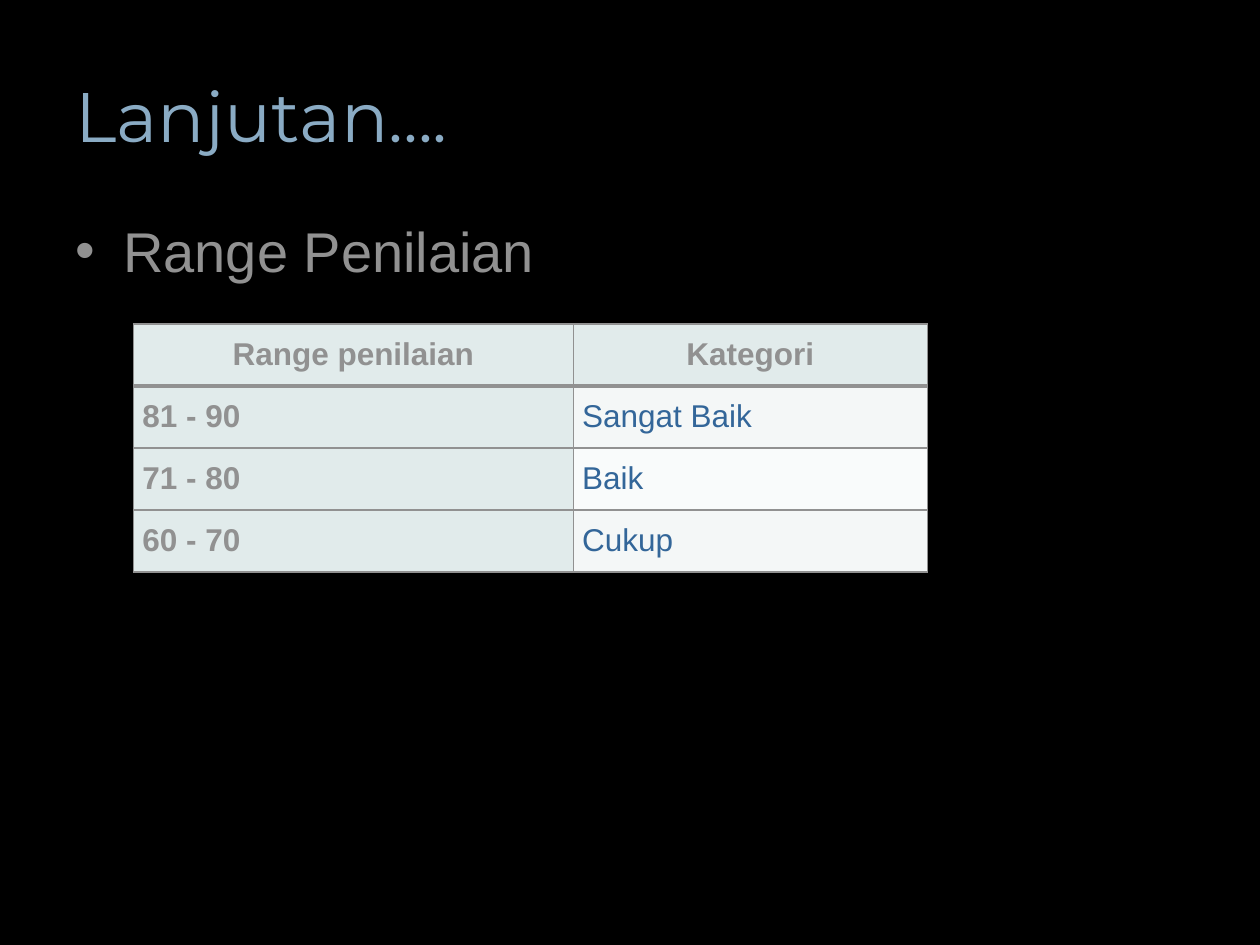
from lxml import etree
from pptx import Presentation
from pptx import util as u
from pptx.dml.color import RGBColor
from pptx.enum import text
from pptx.oxml.ns import qn

W, H = 10, 7.5
GRAY, TITLE_BLUE, TEXT_BLUE = "919191", "8AABC4", "336699"
HEAD_FILL, BAND_FILLS = "E1EBEB", ("F4F7F7", "F9FBFB")
ROWS = [
    ("Range penilaian", "Kategori"),
    ("81 - 90", "Sangat Baik"),
    ("71 - 80", "Baik"),
    ("60 - 70", "Cukup"),
]
COL_SHARES = (0.554, 0.446)


def rgb(value):
    return RGBColor.from_string(value)


def style(p, size, color, font="Arial", bold=False):
    for r in p.runs:
        r.font.size, r.font.name, r.font.bold = u.Pt(size), font, bold
        r.font.color.rgb = rgb(color)


def add_text(s, box, words, anchor):
    tf = s.shapes.add_textbox(*map(u.Inches, box)).text_frame
    tf.word_wrap = True
    tf.vertical_anchor = anchor
    tf.text = words
    return tf.paragraphs[0]


def add_title(s, box):
    p = add_text(s, box, "Lanjutan....", text.MSO_ANCHOR.MIDDLE)
    style(p, 40, TITLE_BLUE, "Montserrat")


def add_bullet(s, box):
    p = add_text(s, box, "Range Penilaian", text.MSO_ANCHOR.TOP)
    pPr = p._p.get_or_add_pPr()
    pPr.set("marL", str(u.Inches(0.38)))
    pPr.set("indent", str(-u.Inches(0.38)))
    etree.SubElement(pPr, qn("a:buFont"), typeface="Arial")
    etree.SubElement(pPr, qn("a:buChar"), char="•")
    style(p, 32, GRAY)


def set_borders(cell, bottom, top):
    tcPr = cell._tc.get_or_add_tcPr()
    widths = {"lnL": 1, "lnR": 1, "lnT": top, "lnB": bottom}
    for i, (tag, width) in enumerate(widths.items()):
        ln = etree.Element(qn("a:" + tag), w=str(u.Pt(width)))
        fill = etree.SubElement(ln, qn("a:solidFill"))
        etree.SubElement(fill, qn("a:srgbClr"), val=GRAY)
        tcPr.insert(i, ln)


def add_score_table(s, box):
    table = s.shapes.add_table(len(ROWS), len(COL_SHARES), *map(u.Inches, box)).table
    for col, share in zip(table.columns, COL_SHARES):
        col.width = u.Inches(box[2] * share)
    for i, row in enumerate(ROWS):
        for j, words in enumerate(row):
            cell = table.cell(i, j)
            head = i == 0 or j == 0
            cell.fill.solid()
            cell.fill.fore_color.rgb = rgb(HEAD_FILL if head else BAND_FILLS[(i - 1) % 2])
            # A thick rule separates the header from the rows
            set_borders(cell, bottom=3 if i == 0 else 1, top=3 if i == 1 else 1)
            cell.margin_left = cell.margin_right = u.Inches(0.07)
            cell.margin_top = cell.margin_bottom = 0
            cell.vertical_anchor = text.MSO_ANCHOR.MIDDLE
            cell.text = words
            p = cell.text_frame.paragraphs[0]
            p.alignment = text.PP_ALIGN.CENTER if i == 0 else text.PP_ALIGN.JUSTIFY
            style(p, 18, GRAY if head else TEXT_BLUE, bold=head)


def main():
    prs = Presentation()
    prs.slide_width, prs.slide_height = u.Inches(W), u.Inches(H)
    s = prs.slides.add_slide(prs.slide_layouts[6])
    s.background.fill.solid()
    s.background.fill.fore_color.rgb = rgb("000000")

    # Title and body share the left margin and width
    left, width = 0.05 * W, 0.883 * W
    add_title(s, (left, 0.2, width, 0.19 * H))
    add_bullet(s, (left, 1.67, width, 0.656 * H))
    add_score_table(s, (1.06, 2.57, 0.63 * W, 1.97))
    prs.save("out.pptx")


if __name__ == "__main__":
    main()
